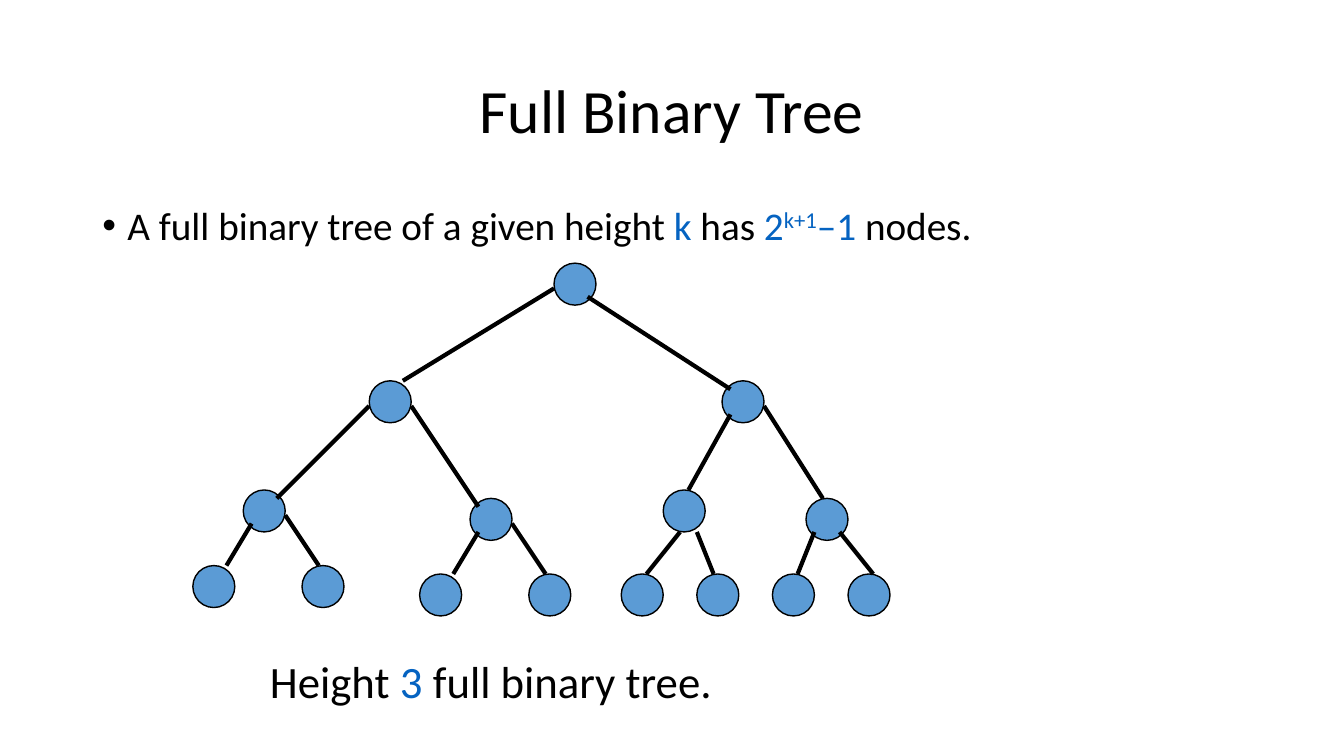
from lxml import etree
from pptx import Presentation
from pptx.dml.color import RGBColor
from pptx.enum.shapes import MSO_CONNECTOR, MSO_SHAPE
from pptx.enum.text import MSO_ANCHOR, PP_ALIGN
from pptx.oxml.ns import qn
from pptx.util import Pt

OVAL = MSO_SHAPE.OVAL
STRAIGHT = MSO_CONNECTOR.STRAIGHT
MIDDLE, TOP = MSO_ANCHOR.MIDDLE, MSO_ANCHOR.TOP
CENTER, LEFT = PP_ALIGN.CENTER, PP_ALIGN.LEFT

COLORS = {"text": "000000", "accent": "0563C1", "node": "5B9BD5", "line": "000000"}
FONT = "Calibri"
UNIT = 6   # grid step of the tree, in points
NODE = 5   # node diameter, in grid steps

# Top left corner of each node, in grid steps, level by level
LEVELS = [
    [(43, 0)],
    [(21, 14), (63, 14)],
    [(6, 27), (33, 28), (56, 27), (73, 28)],
    [(0, 36), (13, 36), (27, 37), (40, 37), (51, 37), (60, 37), (69, 37), (78, 37)],
]
# Edge to each child: start offset in the parent, end offset in the child
EDGES = [
    [((0, 3), (4, 0)), ((4, 4), (1, 1))],
    [((0, 3), (4, 1)), ((5, 3), (1, 1)), ((1, 4), (3, 0)), ((5, 3), (2, 0))],
    [((1, 4), (4, 0)), ((5, 3), (2, 0)), ((1, 4), (4, 0)), ((5, 3), (2, 0)),
     ((2, 5), (3, 0)), ((4, 5), (2, 0)), ((1, 4), (3, 0)), ((4, 4), (3, 0))],
]


def rgb(name):
    return RGBColor.from_string(COLORS[name])


def add_text(slide, box, runs, size, anchor=TOP, align=LEFT, spacing=1.0):
    """Place one paragraph of (text, colour, baseline percent) runs."""
    tf = slide.shapes.add_textbox(*(Pt(v) for v in box)).text_frame
    tf.word_wrap = True
    tf.vertical_anchor = anchor
    p = tf.paragraphs[0]
    p.alignment = align
    p.line_spacing = spacing
    for text, color, baseline in runs:
        r = p.add_run()
        r.text = text
        r.font.name = FONT
        r.font.size = Pt(size)
        r.font.color.rgb = rgb(color)
        if baseline:
            r.font._element.set("baseline", str(baseline * 1000))
    return p


def add_title(slide, box):
    add_text(slide, box, [("Full Binary Tree", "text", 0)], 44, MIDDLE, CENTER, 0.9)


def add_body(slide, box):
    runs = [("A full binary tree of a given height ", "text", 0), ("k", "accent", 0),
            (" has ", "text", 0), ("2", "accent", 0), ("k+1", "accent", 30),
            ("–1 ", "accent", 0), ("nodes.", "text", 0)]
    p = add_text(slide, box, runs, 28, spacing=0.9)
    p.space_before = Pt(10)
    # Hanging bullet
    pPr = p._p.get_or_add_pPr()
    pPr.set("marL", str(Pt(18)))
    pPr.set("indent", str(-Pt(18)))
    etree.SubElement(pPr, qn("a:buFont")).set("typeface", "Arial")
    etree.SubElement(pPr, qn("a:buChar")).set("char", "•")


def add_node(slide, x, y):
    sp = slide.shapes.add_shape(OVAL, Pt(x), Pt(y), Pt(NODE * UNIT), Pt(NODE * UNIT))
    sp.shadow.inherit = False
    sp.fill.solid()
    sp.fill.fore_color.rgb = rgb("node")
    sp.line.color.rgb = rgb("line")
    sp.line.width = Pt(1)


def add_edge(slide, start, end):
    cxn = slide.shapes.add_connector(STRAIGHT, *(Pt(v) for v in start + end))
    cxn.line.color.rgb = rgb("line")
    cxn.line.width = Pt(3)
    etree.SubElement(cxn._element.spPr, qn("a:effectLst"))


def add_tree(slide, left, top):
    def place(node, offset=(0, 0)):
        return (left + (node[0] + offset[0]) * UNIT, top + (node[1] + offset[1]) * UNIT)

    for level in LEVELS:
        for node in level:
            add_node(slide, *place(node))
    # Child i hangs from parent i // 2 of the level above
    for parents, children, edges in zip(LEVELS, LEVELS[1:], EDGES):
        for i, (child, (start, end)) in enumerate(zip(children, edges)):
            add_edge(slide, place(parents[i // 2], start), place(child, end))


def add_caption(slide, box):
    runs = [("Height ", "text", 0), ("3", "accent", 0), (" full binary tree.", "text", 0)]
    add_text(slide, box, runs, 32)


def main():
    prs = Presentation()
    prs.slide_width, prs.slide_height = Pt(960), Pt(540)
    slide = prs.slides.add_slide(prs.slide_layouts[6])
    add_title(slide, (66, 28.75, 828, 104.4))
    add_body(slide, (66, 143.75, 828, 342.6))
    add_tree(slide, 137.75, 188)
    add_caption(slide, (185.75, 463.75, 516, 45.4))
    prs.save("out.pptx")


if __name__ == "__main__":
    main()
